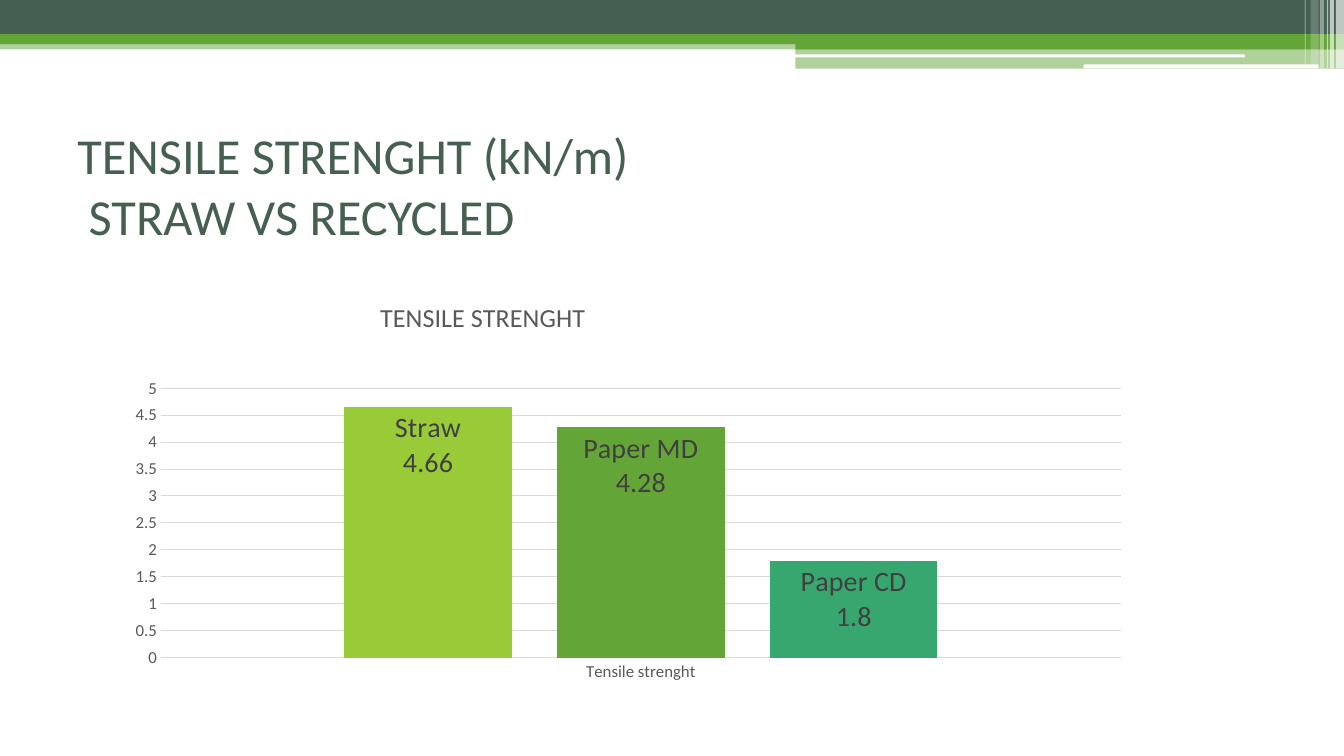
from dataclasses import dataclass
from lxml.etree import SubElement
from pptx import Presentation
from pptx.chart.data import CategoryChartData
from pptx.dml.color import RGBColor
from pptx.enum.chart import XL_CHART_TYPE, XL_LABEL_POSITION, XL_TICK_MARK
from pptx.enum.shapes import MSO_SHAPE
from pptx.enum.text import MSO_ANCHOR, MSO_AUTO_SIZE, PP_ALIGN
from pptx.oxml.ns import qn
from pptx.util import Inches, Pt


@dataclass(frozen=True)
class Theme:
    font: str = "Calibri"
    dark: str = "455F51"
    green: str = "63A537"
    white: str = "FFFFFF"
    lime: str = "99CB38"
    teal: str = "37A76F"
    grey: str = "595959"
    label: str = "404040"
    grid: str = "D9D9D9"
    head: float = 36
    title: float = 18.6
    tag: float = 20
    tick: float = 12


def put(item, form):
    for name, value in form.items():
        setattr(item, name, value)


class Board:
    def __init__(self, deck, theme):
        self.deck = deck
        self.theme = theme
        self.slide = deck.slides.add_slide(deck.slide_layouts[5])

    def box(self, left, top, width, height):
        wide, high = self.deck.slide_width, self.deck.slide_height
        return [int(part * side / 100) for part, side in
                zip((left, top, width, height), (wide, high, wide, high))]

    def type(self, font, size, color):
        put(font, {"name": self.theme.font, "size": Pt(size), "bold": False})
        font.color.rgb = RGBColor.from_string(color)

    def head(self, text, area):
        shape = self.slide.shapes.title
        put(shape, dict(zip(("left", "top", "width", "height"), self.box(*area))))
        frame = shape.text_frame
        put(frame, {"text": text, "word_wrap": True, "auto_size": MSO_AUTO_SIZE.NONE,
                    "vertical_anchor": MSO_ANCHOR.MIDDLE})
        line = frame.paragraphs[0]
        line.alignment = PP_ALIGN.LEFT
        for run in line.runs:
            self.type(run.font, self.theme.head, self.theme.dark)

    def band(self, area, color, alpha=100, kind=MSO_SHAPE.RECTANGLE):
        shape = self.slide.shapes.add_shape(kind, *self.box(*area))
        shape.shadow.inherit = False
        shape.line.fill.background()
        shape.fill.solid()
        shape.fill.fore_color.rgb = RGBColor.from_string(color)
        if alpha < 100:
            tone = shape.fill._xPr.find(".//" + qn("a:srgbClr"))
            SubElement(tone, qn("a:alpha"), val=str(alpha * 1000))

    def place(self, node, index, form):
        old = node.find(qn("c:layout"))
        if old is not None:
            node.remove(old)
        lay = SubElement(node, qn("c:layout"))
        spot = SubElement(lay, qn("c:manualLayout"))
        for name, value in form.items():
            SubElement(spot, qn("c:" + name), val=str(value))
        node.insert(index, lay)

    def axis(self, axis):
        put(axis, {"major_tick_mark": XL_TICK_MARK.NONE,
                   "minor_tick_mark": XL_TICK_MARK.NONE})
        self.type(axis.tick_labels.font, self.theme.tick, self.theme.grey)

    def rule(self, line):
        line.width = Pt(0.75)
        line.color.rgb = RGBColor.from_string(self.theme.grid)

    def tags(self, bar):
        tags = bar.data_labels
        put(tags, {"show_value": True, "show_series_name": True,
                   "position": XL_LABEL_POSITION.INSIDE_END})
        self.type(tags.font, self.theme.tag, self.theme.label)
        mark = SubElement(tags._element, qn("c:separator"))
        mark.text = "\n"
        tags._element.find(qn("c:showBubbleSize")).addnext(mark)

    def chart(self, title, group, bars, area):
        data = CategoryChartData()
        data.categories = [group]
        for name, value, color in bars:
            data.add_series(name, [value])
        chart = self.slide.shapes.add_chart(
            XL_CHART_TYPE.COLUMN_CLUSTERED, *self.box(*area), data).chart
        put(chart, {"has_legend": False, "has_title": True})
        self.type(chart.font, self.theme.tick, self.theme.grey)
        frame = chart.chart_title.text_frame
        frame.text = title
        self.type(frame.paragraphs[0].runs[0].font, self.theme.title, self.theme.grey)

        for axis in (chart.category_axis, chart.value_axis):
            self.axis(axis)
        self.rule(chart.category_axis.format.line)
        scale = chart.value_axis
        put(scale, {"minimum_scale": 0, "maximum_scale": 5, "major_unit": 0.5,
                    "has_major_gridlines": True})
        scale.format.line.fill.background()
        self.rule(scale.major_gridlines.format.line)

        plot = chart.plots[0]
        put(plot, {"gap_width": 219, "overlap": -27, "vary_by_categories": False})
        for bar, (name, value, color) in zip(plot.series, bars):
            bar.format.fill.solid()
            bar.format.fill.fore_color.rgb = RGBColor.from_string(color)
            self.tags(bar)

        root = chart._chartSpace
        self.place(root.find(".//" + qn("c:title")), 1,
                   {"xMode": "edge", "yMode": "edge", "x": 0.25, "y": 0.03})
        self.place(root.find(".//" + qn("c:plotArea")), 0,
                   {"layoutTarget": "inner", "xMode": "edge", "yMode": "edge",
                    "x": 0.04, "y": 0.26, "w": 0.94, "h": 0.66})


def main():
    deck = Presentation()
    put(deck, {"slide_width": Inches(13.33), "slide_height": Inches(7.5)})
    theme = Theme()
    board = Board(deck, theme)

    for area, color, alpha in (
            ((0, 5.33, 100, 1.2), theme.green, 50),
            ((0, 0, 100, 4.53), theme.dark, 100),
            ((0, 4.53, 100, 1.33), theme.green, 100),
            ((59.18, 5.2, 40.82, 1.33), theme.green, 100),
            ((59.18, 6.4, 40.82, 2.67), theme.green, 50)):
        board.band(area, color, alpha)
    for area in ((59.1, 7.2, 33.53, 0.4), (80.63, 8.53, 17.48, 0.53)):
        board.band(area, theme.white, kind=MSO_SHAPE.ROUNDED_RECTANGLE)
    for left, width, height, alpha in (
            (99.4, 0.6, 9.07, 65), (98.95, 0.3, 9.07, 65), (98.72, 0.1, 9.07, 60),
            (98.2, 0.3, 9.07, 40), (97.52, 0.6, 8.53, 20), (97.07, 0.1, 8.53, 30)):
        board.band((left, 0, width, height), theme.white, alpha)

    board.head("TENSILE STRENGHT (kN/m)\v STRAW VS RECYCLED", (5, 16.67, 90, 15.6))
    board.chart("TENSILE STRENGHT", "Tensile strenght",
                (("Straw", 4.66, theme.lime), ("Paper MD", 4.28, theme.green),
                 ("Paper CD", 1.8, theme.teal)), (8.93, 37.33, 76, 54))
    deck.save("out.pptx")


if __name__ == "__main__":
    main()
